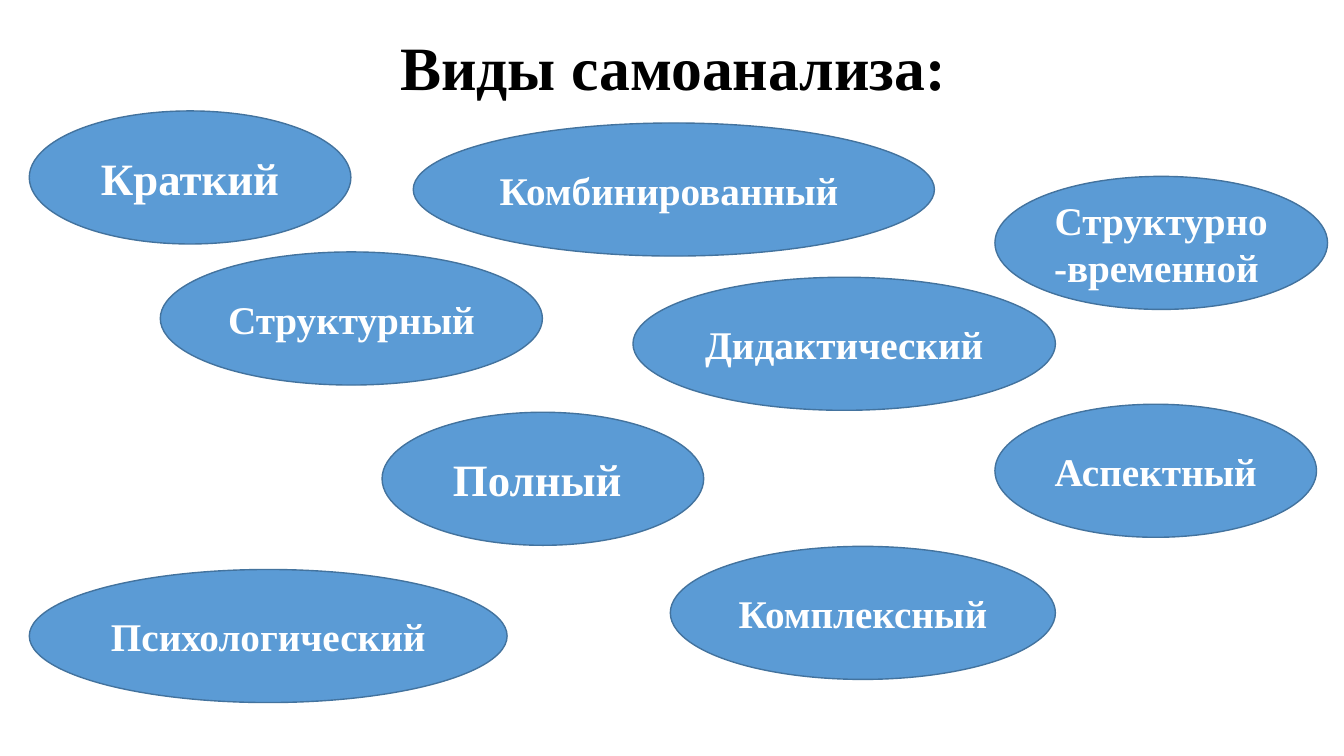
from pptx import Presentation
from pptx.dml.color import RGBColor
from pptx.enum.shapes import MSO_SHAPE
from pptx.enum.text import MSO_ANCHOR, PP_ALIGN
from pptx.util import Inches, Pt

OVAL = MSO_SHAPE.OVAL
MIDDLE = MSO_ANCHOR.MIDDLE
CENTER = PP_ALIGN.CENTER

BLACK = RGBColor(0x00, 0x00, 0x00)
WHITE = RGBColor(0xFF, 0xFF, 0xFF)
BLUE = RGBColor(0x5B, 0x9B, 0xD5)
DARK_BLUE = RGBColor(0x43, 0x73, 0x9E)

OVAL_HEIGHT = 17.6

# Label, left, top, width (percent of the slide), text size
KINDS = [
    ("Краткий", 2.18, 14.67, 23.93, 32),
    ("Комплексный", 49.88, 72.27, 28.65, 28),
    ("Структурный", 11.93, 33.33, 28.43, 28),
    ("Комбинированный ", 30.75, 16.27, 38.78, 28),
    ("Полный ", 28.43, 54.53, 23.93, 32),
    ("Психологический ", 2.18, 75.33, 35.55, 28),
    ("Аспектный ", 74.03, 53.47, 23.93, 28),
    ("Дидактический ", 47.1, 36.67, 31.43, 28),
    ("Структурно-временной ", 74.03, 23.33, 24.75, 28),
]


class Deck:
    """Style and current slide; lengths are percentages of the slide's size."""

    font = "Times New Roman"

    def __init__(self):
        self.prs = Presentation()
        self.prs.slide_width = Inches(13.33)
        self.prs.slide_height = Inches(7.5)
        self.s = self.prs.slides.add_slide(self.prs.slide_layouts[6])

    def box(self, left, top, width, height):
        w, h = self.prs.slide_width, self.prs.slide_height
        return [int(share * side / 100)
                for share, side in ((left, w), (top, h), (width, w), (height, h))]

    def label(self, sp, text, size, color):
        tf = sp.text_frame
        tf.word_wrap = True
        tf.vertical_anchor = MIDDLE
        p = tf.paragraphs[0]
        p.text = text
        p.alignment = CENTER
        p.font.name = self.font
        p.font.size = Pt(size)
        p.font.bold = True
        p.font.color.rgb = color
        return p

    def title(self, text, *place):
        sp = self.s.shapes.add_textbox(*self.box(*place))
        self.label(sp, text, 44, BLACK).line_spacing = 0.9

    def oval(self, text, left, top, width, size):
        sp = self.s.shapes.add_shape(OVAL, *self.box(left, top, width, OVAL_HEIGHT))
        sp.shadow.inherit = False
        sp.fill.solid()
        sp.fill.fore_color.rgb = BLUE
        sp.line.color.rgb = DARK_BLUE
        sp.line.width = Pt(1)
        self.label(sp, text, size, WHITE)


def main():
    deck = Deck()

    # Heading
    deck.title("Виды самоанализа:", 6.98, 3.2, 86.25, 12.27)

    # Kinds of self-analysis
    for kind in KINDS:
        deck.oval(*kind)

    deck.prs.save("out.pptx")


if __name__ == "__main__":
    main()
